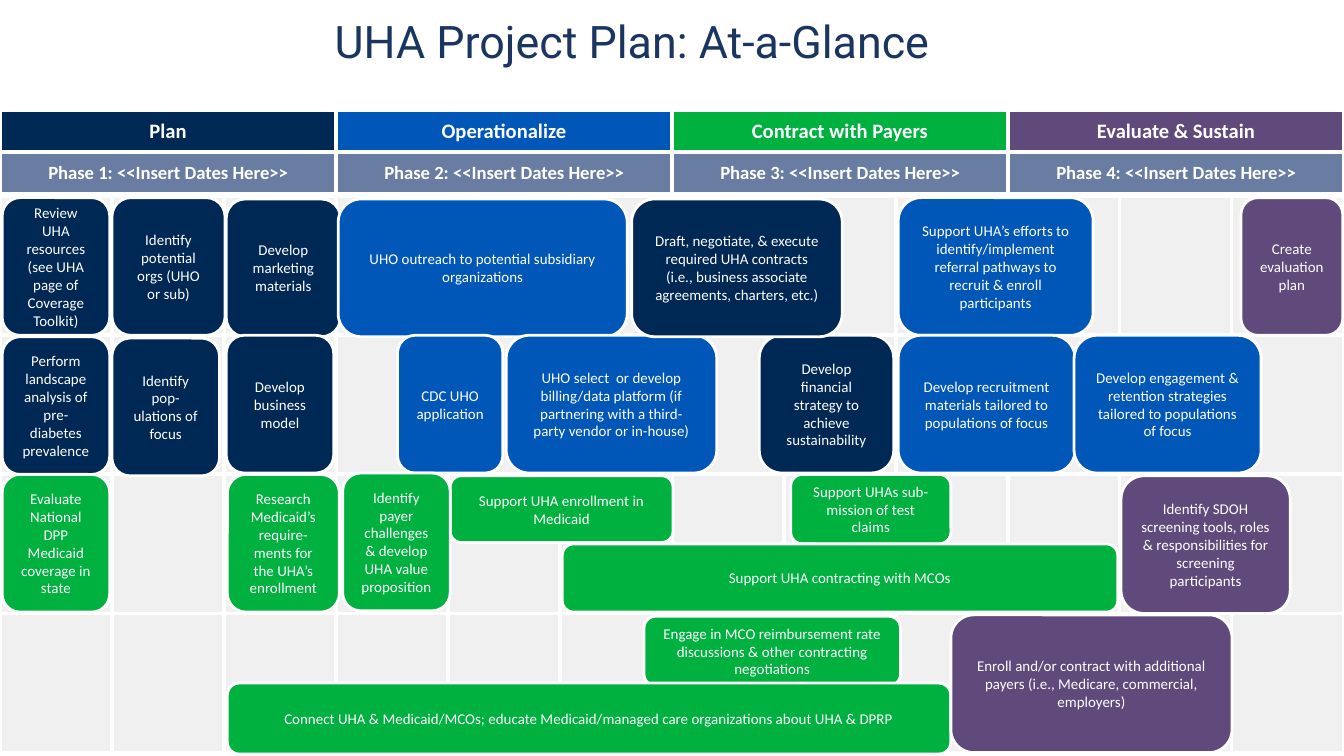
import dataclasses
import typing

import lxml.etree
import pptx
import pptx.dml.color
import pptx.enum.shapes
import pptx.enum.text
import pptx.oxml.ns
import pptx.util

WIDE = pptx.util.Inches(10)
HIGH = WIDE * 9 // 16
COL = WIDE / 12
ROW = HIGH * 0.184
TOP = pptx.util.Inches(1.46)

NAVY, BLUE, GREEN, PLUM = "002855", "0057B8", "00B140", "604A7B"
SLATE, PALE, WHITE, INK = "687DA1", "F0F0F0", "FFFFFF", "193560"

MID = pptx.enum.text.MSO_ANCHOR.MIDDLE
MARGINS = {
    "margin_left": pptx.util.Inches(0.06),
    "margin_right": pptx.util.Inches(0.06),
    "margin_top": pptx.util.Inches(0.03),
    "margin_bottom": pptx.util.Inches(0.03),
    "vertical_anchor": MID,
}
FRAME = {"word_wrap": True, "vertical_anchor": MID}
CENTER = {"alignment": pptx.enum.text.PP_ALIGN.CENTER}
PLAIN = {"first_row": False, "horz_banding": False}


@dataclasses.dataclass
class Task:
    col: float
    row: float
    cols: float
    rows: float
    fill: str
    text: str


@dataclasses.dataclass
class Phase:
    name: str
    fill: str


PHASES = [
    Phase("Plan", NAVY),
    Phase("Operationalize", BLUE),
    Phase("Contract with Payers", GREEN),
    Phase("Evaluate & Sustain", PLUM),
]

TASKS = [
    Task(0.02, 0.01, 0.96, 0.99, NAVY, "Review UHA resources (see UHA page of Coverage Toolkit)"),
    Task(2.02, 0.02, 1.02, 0.99, NAVY, "Develop marketing materials"),
    Task(1, 0.01, 1.01, 0.99, NAVY, "Identify potential orgs (UHO or sub)"),
    Task(3.02, 0.02, 2.58, 0.99, BLUE, "UHO outreach to potential subsidiary organizations"),
    Task(6.78, 1, 1.2, 0.99, NAVY, "Develop financial strategy to achieve sustainability"),
    Task(4.52, 1, 1.88, 0.99, BLUE,
         "UHO select  or develop billing/data platform (if partnering with a third-party vendor or in-house)"),
    Task(8.02, 0.01, 1.74, 0.99, BLUE,
         "Support UHA’s efforts to identify/implement referral pathways to recruit & enroll participants"),
    Task(2.03, 2, 1, 0.99, GREEN, "Research Medicaid’s require-ments for the UHA’s enrollment"),
    Task(4.02, 2.01, 1.99, 0.48, GREEN, "Support UHA enrollment in Medicaid"),
    Task(5.75, 3.02, 2.29, 0.5, GREEN,
         "Engage in MCO reimbursement rate discussions & other contracting negotiations"),
    Task(2.03, 3.5, 6.46, 0.51, GREEN,
         "Connect UHA & Medicaid/MCOs; educate Medicaid/managed care organizations about UHA & DPRP"),
    Task(3.55, 1, 0.94, 0.99, BLUE, "CDC UHO application"),
    Task(8.49, 3.01, 2.51, 0.99, PLUM,
         "Enroll and/or contract with additional payers (i.e., Medicare, commercial, employers)"),
    Task(10.01, 2.01, 1.51, 0.99, PLUM,
         "Identify SDOH screening tools, roles & responsibilities for screening participants"),
    Task(5.64, 0.02, 1.88, 0.99, NAVY,
         "Draft, negotiate, & execute required UHA contracts (i.e., business associate agreements, charters, etc.)"),
    Task(8.02, 1, 1.58, 0.99, BLUE, "Develop recruitment materials tailored to populations of focus"),
    Task(9.59, 1, 1.67, 0.99, BLUE,
         "Develop engagement & retention strategies tailored to populations of focus"),
    Task(0.02, 1.01, 0.96, 0.99, NAVY, "Perform landscape analysis of pre-diabetes prevalence"),
    Task(0.02, 2, 0.96, 0.99, GREEN, "Evaluate National DPP Medicaid coverage in state"),
    Task(7.06, 2, 1.43, 0.5, GREEN, "Support UHAs sub-mission of test claims"),
    Task(2.02, 1, 0.96, 0.99, NAVY, "Develop business model"),
    Task(11.08, 0.01, 0.91, 0.99, PLUM, "Create evaluation plan"),
    Task(3.06, 1.99, 0.96, 0.99, GREEN, "Identify payer challenges\n& develop UHA value proposition"),
    Task(1, 1.02, 0.96, 0.99, NAVY, "Identify pop-ulations of focus"),
    Task(5.02, 2.5, 4.96, 0.49, GREEN, "Support UHA contracting with MCOs"),
]


def put(thing: typing.Any, style: dict) -> None:
    for key, value in style.items():
        setattr(thing, key, value)


def hue(code: str) -> pptx.dml.color.RGBColor:
    return pptx.dml.color.RGBColor.from_string(code)


def paint(thing: typing.Any, code: str) -> None:
    thing.fill.solid()
    thing.fill.fore_color.rgb = hue(code)


def write(frame: typing.Any, text: str, size: float, face: str = "Calibri",
          code: str = WHITE, bold: bool = False, line: dict = CENTER) -> None:
    para = frame.paragraphs[0]
    put(para, line)
    for count, part in enumerate(text.split("\n")):
        if count:
            para.add_line_break()
        run = para.add_run()
        run.text = part
        put(run.font, {"size": pptx.util.Pt(size), "name": face, "bold": bold})
        run.font.color.rgb = hue(code)


def edge(cell: typing.Any) -> None:
    props = cell._tc.get_or_add_tcPr()
    for side in ("a:lnL", "a:lnR", "a:lnT", "a:lnB"):
        line = lxml.etree.SubElement(props, pptx.oxml.ns.qn(side), w=str(pptx.util.Pt(2.25)))
        fill = lxml.etree.SubElement(line, pptx.oxml.ns.qn("a:solidFill"))
        lxml.etree.SubElement(fill, pptx.oxml.ns.qn("a:srgbClr"), val=WHITE)


def grid(slide: typing.Any, top: int, high: int, fills: list[list[str]]) -> typing.Any:
    rows, cols = len(fills), len(fills[0])
    table = slide.shapes.add_table(rows, cols, 0, top, WIDE, high).table
    put(table, PLAIN)
    for r, codes in enumerate(fills):
        for c, code in enumerate(codes):
            cell = table.cell(r, c)
            put(cell, MARGINS)
            edge(cell)
            paint(cell, code)
    return table


def draw(slide: typing.Any, task: Task) -> None:
    box = slide.shapes.add_shape(
        pptx.enum.shapes.MSO_SHAPE.ROUNDED_RECTANGLE,
        int(task.col * COL), int(TOP + task.row * ROW),
        int(task.cols * COL), int(task.rows * ROW))
    box.shadow.inherit = False
    paint(box, task.fill)
    box.line.color.rgb = hue(WHITE)
    box.line.width = pptx.util.Pt(1.5)
    put(box.text_frame, FRAME)
    write(box.text_frame, task.text, 8)


def head(slide: typing.Any) -> None:
    title = slide.shapes.title
    put(title, {"left": int(WIDE * 0.239), "top": int(HIGH * 0.0125),
                "width": int(WIDE * 0.479), "height": int(HIGH * 0.09)})
    put(title.text_frame, FRAME | {"auto_size": pptx.enum.text.MSO_AUTO_SIZE.NONE})
    write(title.text_frame, "UHA Project Plan: At-a-Glance", 24, "Roboto", INK,
          line={"alignment": pptx.enum.text.PP_ALIGN.LEFT, "line_spacing": 0.9})


def main() -> None:
    deck = pptx.Presentation()
    put(deck, {"slide_width": WIDE, "slide_height": HIGH})
    slide = deck.slides.add_slide(deck.slide_layouts[5])
    head(slide)
    grid(slide, TOP, int(4 * ROW), [[PALE] * 12] * 4)
    for task in TASKS:
        draw(slide, task)
    fills = [[phase.fill for phase in PHASES], [SLATE] * len(PHASES)]
    table = grid(slide, pptx.util.Inches(0.82), pptx.util.Inches(0.62), fills)
    for c, phase in enumerate(PHASES):
        write(table.cell(0, c).text_frame, phase.name, 11, bold=True)
        write(table.cell(1, c).text_frame, f"Phase {c + 1}: <<Insert Dates Here>>", 10, bold=True)
    deck.save("out.pptx")


if __name__ == "__main__":
    main()
